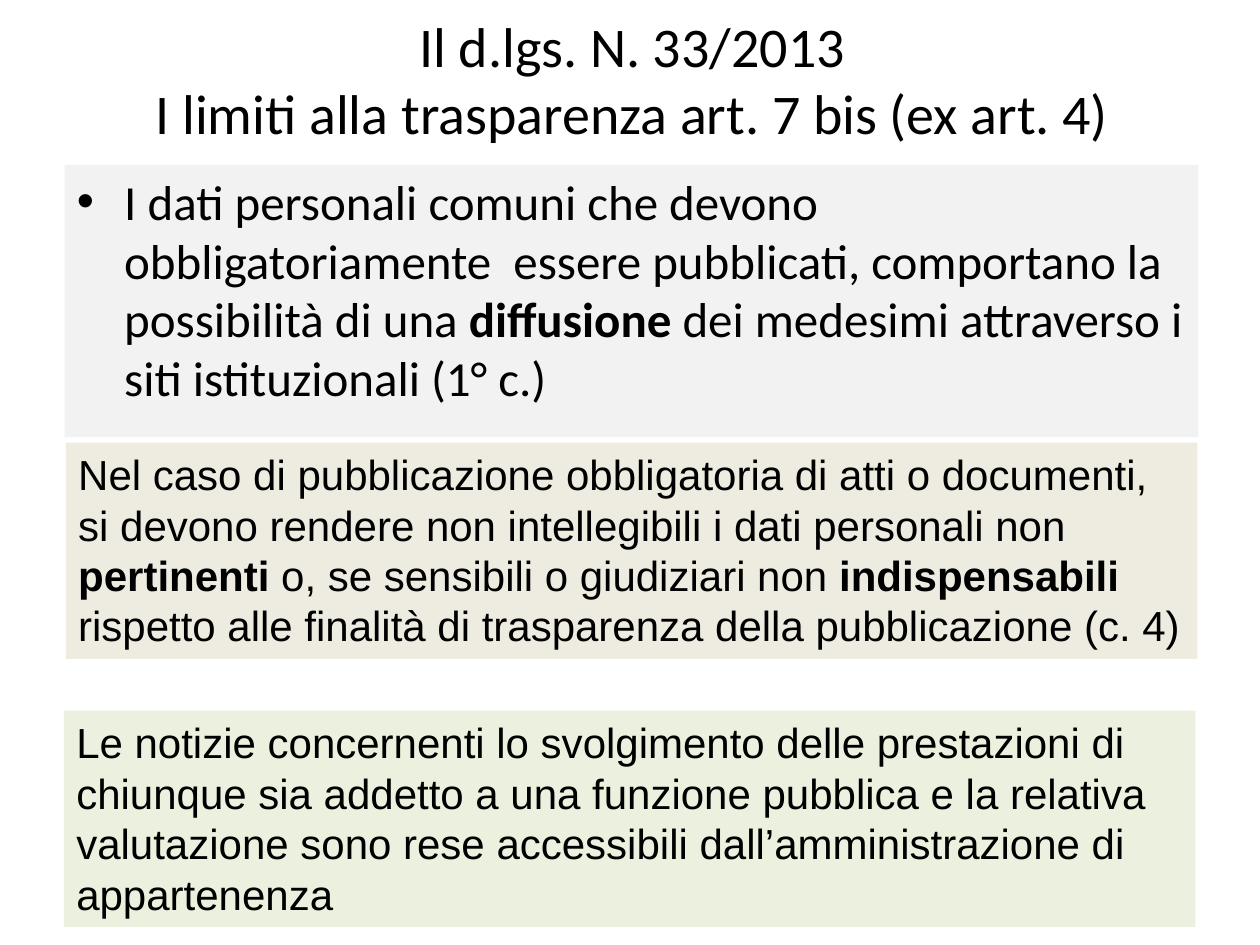
import pptx
import pptx.util
import pptx.dml.color
import pptx.enum.text
import pptx.oxml.ns
import lxml.etree

Pt = pptx.util.Pt
ANCHOR = pptx.enum.text.MSO_ANCHOR
ALIGN = pptx.enum.text.PP_ALIGN

# Content: runs are (text, bold)
TITLE = [("Il d.lgs. N. 33/2013\vI limiti alla trasparenza art. 7 bis (ex art. 4)", False)]
DIFFUSION = [
    ("I dati personali comuni che devono obbligatoriamente  essere pubblicati, "
     "comportano la possibilità di una ", False),
    ("diffusione ", True),
    ("dei medesimi attraverso i siti istituzionali (1° c.)", False),
]
REDACTION = [
    ("Nel caso di pubblicazione obbligatoria di atti o documenti, si devono "
     "rendere non intellegibili i dati personali non ", False),
    ("pertinenti", True),
    (" o, se sensibili o giudiziari non ", False),
    ("indispensabili ", True),
    ("rispetto alle finalità di trasparenza della pubblicazione (c. 4)", False),
]
PERFORMANCE = [
    ("Le notizie concernenti lo svolgimento delle prestazioni di chiunque sia "
     "addetto a una funzione pubblica e la relativa valutazione sono rese "
     "accessibili dall’amministrazione di appartenenza", False),
]

THEME = {
    "text": "000000",
    "title": {"font": "Calibri", "size": 32, "fill": None},
    "bullet": {"font": "Calibri", "size": 28, "fill": "F2F2F2"},
    "redaction": {"font": "Arial", "size": 24, "fill": "EEECE1"},
    "performance": {"font": "Arial", "size": 24, "fill": "EBF1DE"},
}

# Panels: style, runs, (left, top, width, height) in points
PANELS = [
    ("title", TITLE, (37.44, 0, 648, 90)),
    ("bullet", DIFFUSION, (36.9, 94.3, 648, 155.5)),
    ("redaction", REDACTION, (37.6, 252.9, 646.6, 123.6)),
    ("performance", PERFORMANCE, (36.5, 406.1, 646.6, 123.6)),
]
BULLET_INDENT = 27


def color(value):
    return pptx.dml.color.RGBColor.from_string(value)


def add_panel(slide, name, runs, box):
    style = THEME[name]
    shape = slide.shapes.add_textbox(*(Pt(length) for length in box))
    if style["fill"]:
        shape.fill.solid()
        shape.fill.fore_color.rgb = color(style["fill"])
    frame = shape.text_frame
    frame.word_wrap = True
    paragraph = frame.paragraphs[0]
    for text, bold in runs:
        for index, line in enumerate(text.split("\v")):
            if index:
                paragraph.add_line_break()
            run = paragraph.add_run()
            run.text = line
            run.font.name = style["font"]
            run.font.size = Pt(style["size"])
            run.font.bold = bold
            run.font.color.rgb = color(THEME["text"])
    return frame


def add_bullet(paragraph, size):
    paragraph.space_before = Pt(size * 0.2)
    properties = paragraph._p.get_or_add_pPr()
    properties.set("marL", str(Pt(BULLET_INDENT)))
    properties.set("indent", str(-Pt(BULLET_INDENT)))
    font = lxml.etree.SubElement(properties, pptx.oxml.ns.qn("a:buFont"))
    font.set("typeface", "Arial")
    bullet = lxml.etree.SubElement(properties, pptx.oxml.ns.qn("a:buChar"))
    bullet.set("char", "•")


def main():
    presentation = pptx.Presentation()
    presentation.slide_width, presentation.slide_height = Pt(720), Pt(540)
    slide = presentation.slides.add_slide(presentation.slide_layouts[6])

    frames = {name: add_panel(slide, name, runs, box) for name, runs, box in PANELS}

    # Centred heading
    frames["title"].vertical_anchor = ANCHOR.MIDDLE
    frames["title"].paragraphs[0].alignment = ALIGN.CENTER

    # Bulleted first panel
    add_bullet(frames["bullet"].paragraphs[0], THEME["bullet"]["size"])

    # Lower panels grow with their text
    for name in ("redaction", "performance"):
        frames[name].auto_size = pptx.enum.text.MSO_AUTO_SIZE.SHAPE_TO_FIT_TEXT

    presentation.save("out.pptx")


if __name__ == "__main__":
    main()
